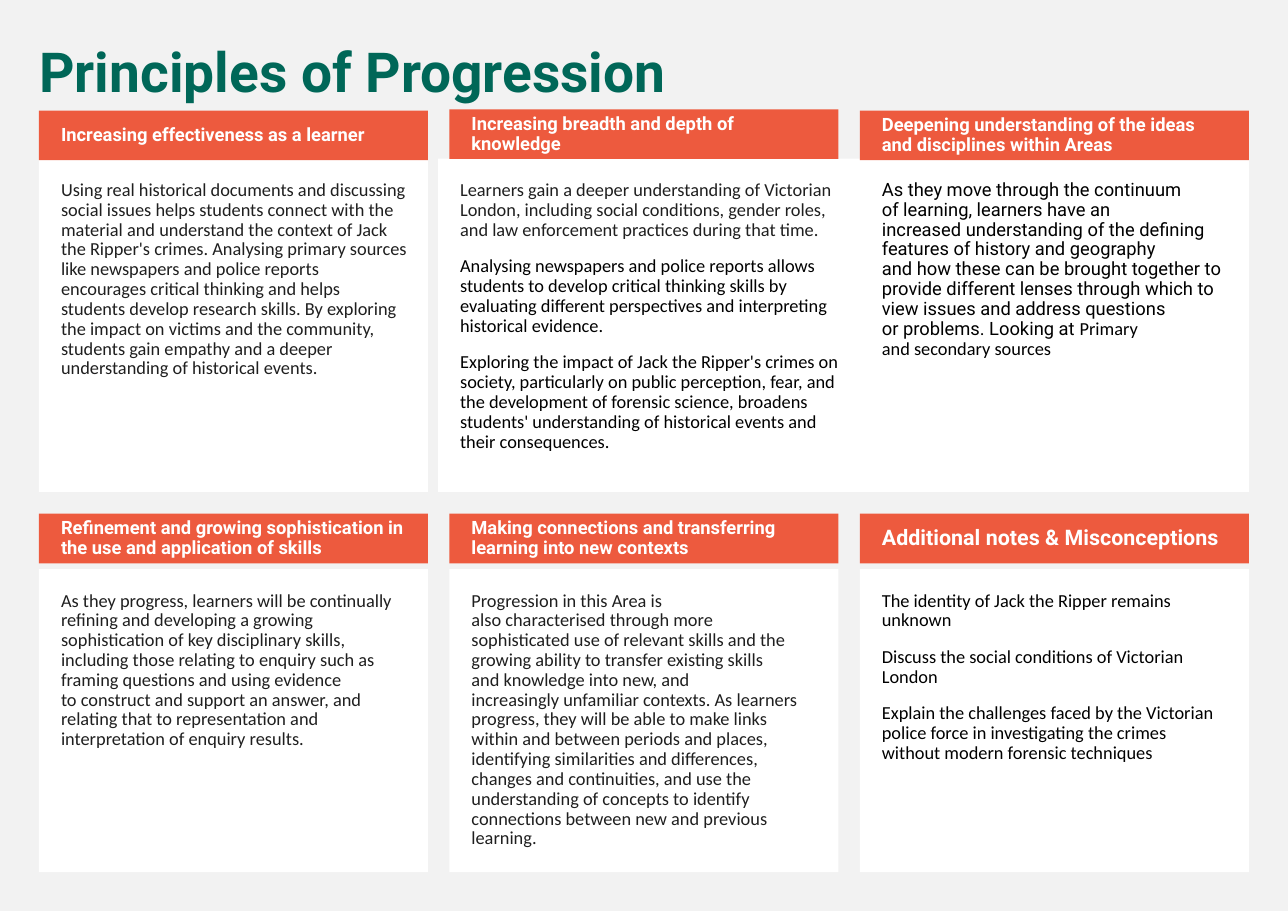
from pptx import Presentation
from pptx import util as u
from pptx.dml import color
from pptx.enum import shapes, text

GREEN, ORANGE, WHITE = "006758", "ED5A3E", "FFFFFF"
GREY, INK, BLACK = "F2F2F2", "1F1F1F", "000000"
HEADING_FONT, BODY_FONT = "Roboto", "Calibri"


def paint(target, colour):
    target.solid()
    target.fore_color.rgb = color.RGBColor.from_string(colour)


def tie_words(wording):
    return wording.replace("~", chr(160))


class ProgressionSlide:
    def __init__(self, deck):
        self.slide = deck.slides.add_slide(deck.slide_layouts[5])
        paint(self.slide.background.fill, GREY)

    def style_run(self, run, font, size, colour, bold=False):
        run.font.name = font
        run.font.size = u.Pt(size)
        run.font.bold = bold
        paint(run.font.fill, colour)

    def style_paragraph(self, paragraph):
        paragraph.alignment = text.PP_ALIGN.LEFT
        paragraph.line_spacing = 0.9
        paragraph.space_before = u.Pt(11)

    def set_frame(self, frame, anchor, margins):
        frame.word_wrap = True
        frame.auto_size = text.MSO_AUTO_SIZE.NONE
        frame.vertical_anchor = anchor
        (frame.margin_left, frame.margin_top,
         frame.margin_right, frame.margin_bottom) = map(u.Pt, margins)

    def title(self, wording, left, top, width, height):
        heading = self.slide.shapes.title
        heading.left, heading.top = u.Pt(left), u.Pt(top)
        heading.width, heading.height = u.Pt(width), u.Pt(height)
        frame = heading.text_frame
        frame.text = wording
        self.set_frame(frame, text.MSO_ANCHOR.TOP, (7.2, 3.6, 7.2, 3.6))
        self.style_paragraph(frame.paragraphs[0])
        self.style_run(frame.paragraphs[0].runs[0], HEADING_FONT, 36, GREEN, True)

    def panel(self, box, fill):
        panel = self.slide.shapes.add_shape(
            shapes.MSO_SHAPE.RECTANGLE, *map(u.Pt, box))
        panel.shadow.inherit = False
        panel.line.fill.background()
        paint(panel.fill, fill)
        return panel.text_frame

    def header(self, box, wording, size):
        frame = self.panel(box, ORANGE)
        frame.text = tie_words(wording)
        self.set_frame(frame, text.MSO_ANCHOR.MIDDLE, (14.4, 3.6, 7.2, 3.6))
        self.style_paragraph(frame.paragraphs[0])
        self.style_run(frame.paragraphs[0].runs[0], HEADING_FONT, size, WHITE, True)

    def card(self, box, paragraphs):
        frame = self.panel(box, WHITE)
        self.set_frame(frame, text.MSO_ANCHOR.TOP, (14.4, 14.4, 13.4, 14.4))
        for index, pieces in enumerate(paragraphs):
            paragraph = frame.add_paragraph() if index else frame.paragraphs[0]
            self.style_paragraph(paragraph)
            for wording, font, colour in pieces:
                run = paragraph.add_run()
                run.text = tie_words(wording)
                self.style_run(run, font, 12, colour)


LEFT, STEP, WIDTH, HEADER_HEIGHT = 25.5, 268.2, 254.2, 32.4
HEADER_TOPS, CARD_TOPS, CARD_HEIGHTS = (72.3, 335.8), (103.7, 372), (217.8, 198)

SECTIONS = [
    ("Increasing effectiveness as a learner", [
        [("Using real historical documents and discussing social issues helps students connect with the material and understand the context of Jack the Ripper's crimes. Analysing primary sources like newspapers and police reports encourages critical thinking and helps students develop research skills. By exploring the impact on victims and the community, students gain empathy and a deeper understanding of historical events.", BODY_FONT, INK)],
    ]),
    ("Increasing breadth and depth of knowledge", [
        [("Learners gain a deeper understanding of Victorian London, including social conditions, gender roles, and law enforcement practices during that time.", BODY_FONT, INK)],
        [("Analysing newspapers and police reports allows students to develop critical thinking skills by evaluating different perspectives and interpreting historical evidence.", BODY_FONT, BLACK)],
        [("Exploring the impact of Jack the Ripper's crimes on society, particularly on public perception, fear, and the development of forensic science, broadens students' understanding of historical events and their consequences.", BODY_FONT, BLACK)],
    ]),
    ("Deepening understanding of the ideas and~disciplines within Areas", [
        [("As they move through the continuum of~learning,~learners have an increased~understanding of the~defining features of~history and geography and~how these can be~brought together to provide~different lenses~through which to view issues and~address~questions or~problems.~Looking at~", HEADING_FONT, BLACK),
         ("Primary and~secondary sources", BODY_FONT, BLACK)],
    ]),
    ("Refinement and growing sophistication in the use and~application of skills", [
        [("As they progress, learners will be~continually refining and developing a~growing sophistication of key~disciplinary skills, including those~relating to enquiry such as framing~questions and using evidence to~construct and support an~answer,~and relating that to~representation and interpretation of~enquiry results.", BODY_FONT, INK)],
    ]),
    ("Making connections and transferring learning into~new contexts", [
        [("Progression in this Area is also~characterised~through more sophisticated~use of relevant skills and the growing~ability to transfer existing skills and~knowledge into new, and increasingly~unfamiliar contexts. As learners progress,~they will be able to make links within and~between periods and places, identifying~similarities and differences, changes and~continuities, and use the understanding of~concepts to identify connections between~new and previous learning.~", BODY_FONT, INK)],
    ]),
    ("Additional notes & Misconceptions", [
        [("The identity of Jack the Ripper remains unknown", BODY_FONT, BLACK)],
        [("Discuss the social conditions of Victorian London", BODY_FONT, BLACK)],
        [("Explain the challenges faced by the Victorian police force in investigating the crimes without modern forensic techniques", BODY_FONT, BLACK)],
    ]),
]
BREADTH, NOTES = 1, 5


def main():
    deck = Presentation()
    deck.slide_width, deck.slide_height = u.Pt(841.68), u.Pt(595.44)
    page = ProgressionSlide(deck)
    page.title("Principles of Progression", 18.5, 25.92, 797.76, 46.8)
    for index, (heading, paragraphs) in enumerate(SECTIONS):
        row, column = divmod(index, 3)
        left = LEFT + column * STEP
        card_left, card_width, header_top = left, WIDTH, HEADER_TOPS[row]
        if index == BREADTH:
            card_left, card_width, header_top = 286.3, 275.8, 71.5
        page.card((card_left, CARD_TOPS[row], card_width, CARD_HEIGHTS[row]), paragraphs)
        page.header((left, header_top, WIDTH, HEADER_HEIGHT), heading,
                    14 if index == NOTES else 12)
    deck.save("out.pptx")


if __name__ == "__main__":
    main()
